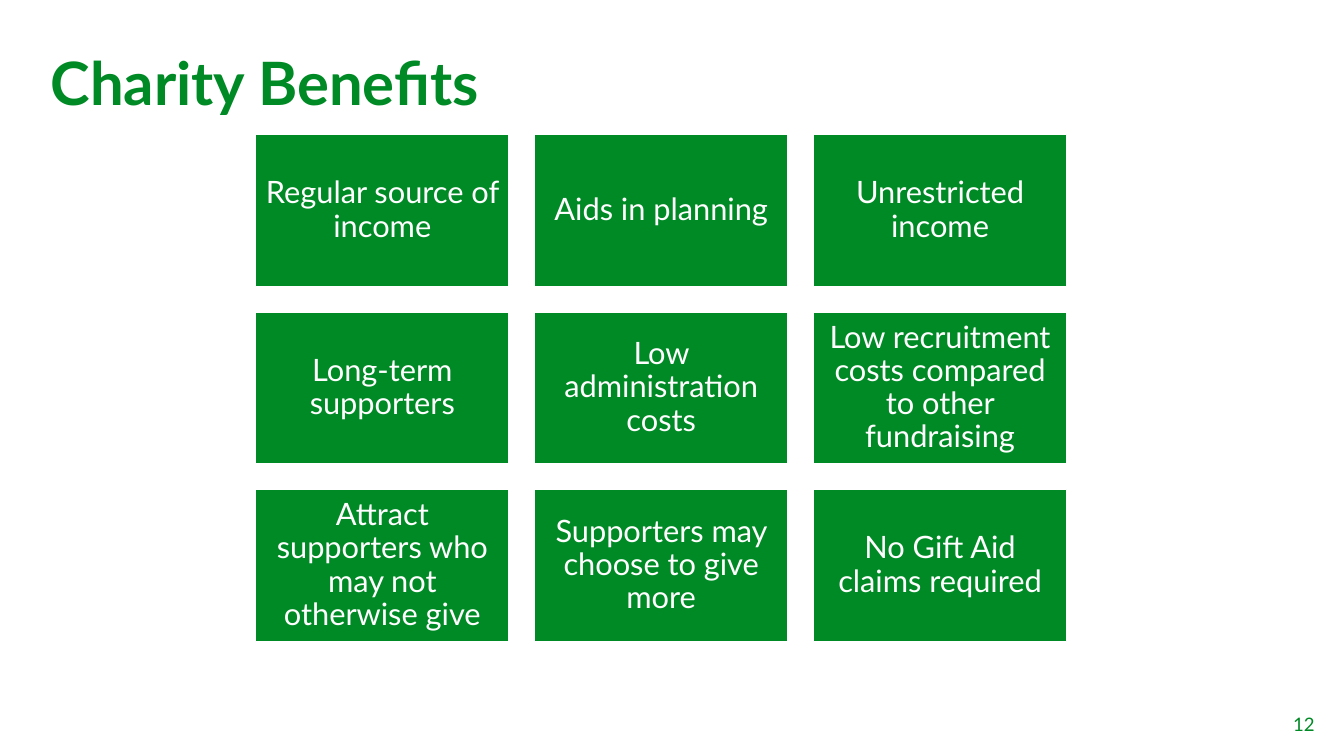
import pptx
import pptx.util
import pptx.dml.color
import pptx.enum.shapes
import pptx.enum.text

Pt = pptx.util.Pt
RGB = pptx.dml.color.RGBColor.from_string
ALIGN = pptx.enum.text.PP_ALIGN
ANCHOR = pptx.enum.text.MSO_ANCHOR
COLORS = {"green": "008A26", "white": "FFFFFF"}


def write(frame, text, size, color, align, spacing=1.0, bold=False):
    frame.word_wrap = True
    frame.text = text
    paragraph = frame.paragraphs[0]
    paragraph.alignment = align
    paragraph.line_spacing = spacing
    font = paragraph.runs[0].font
    font.name = "Lato"
    font.size = Pt(size)
    font.bold = bold
    font.color.rgb = RGB(COLORS[color])


deck = pptx.Presentation()
deck.slide_width, deck.slide_height = Pt(960), Pt(540)
slide = deck.slides.add_slide(deck.slide_layouts[6])

title = slide.shapes.add_textbox(Pt(29), Pt(35.3), Pt(423.4), Pt(80))
write(title.text_frame, "Charity Benefits", 42.7, "green", ALIGN.LEFT, 0.9, True)

page_number = slide.shapes.add_textbox(Pt(774.7), Pt(505.4), Pt(171.4), Pt(23))
write(page_number.text_frame, "12", 13.3, "green", ALIGN.RIGHT)

benefits = [
    "Regular source of income",
    "Aids in planning",
    "Unrestricted income",
    "Long-term supporters",
    "Low administration costs",
    "Low recruitment costs compared to other fundraising",
    "Attract supporters who may not otherwise give",
    "Supporters may choose to give more",
    "No Gift Aid claims required",
]
left, top, width, height, gap = 182.6, 96, 181, 108.6, 18.2
for index, benefit in enumerate(benefits):
    row, column = divmod(index, 3)
    tile = slide.shapes.add_shape(
        pptx.enum.shapes.MSO_SHAPE.RECTANGLE,
        Pt(left + column * (width + gap)),
        Pt(top + row * (height + gap)),
        Pt(width),
        Pt(height),
    )
    tile.shadow.inherit = False
    tile.fill.solid()
    tile.fill.fore_color.rgb = RGB(COLORS["green"])
    tile.line.color.rgb = RGB(COLORS["white"])
    tile.line.width = Pt(1)
    frame = tile.text_frame
    frame.vertical_anchor = ANCHOR.MIDDLE
    frame.margin_left = frame.margin_right = Pt(6.6)
    frame.margin_top = frame.margin_bottom = Pt(6.6)
    write(frame, benefit, 22, "white", ALIGN.CENTER, 0.9)

deck.save("out.pptx")
